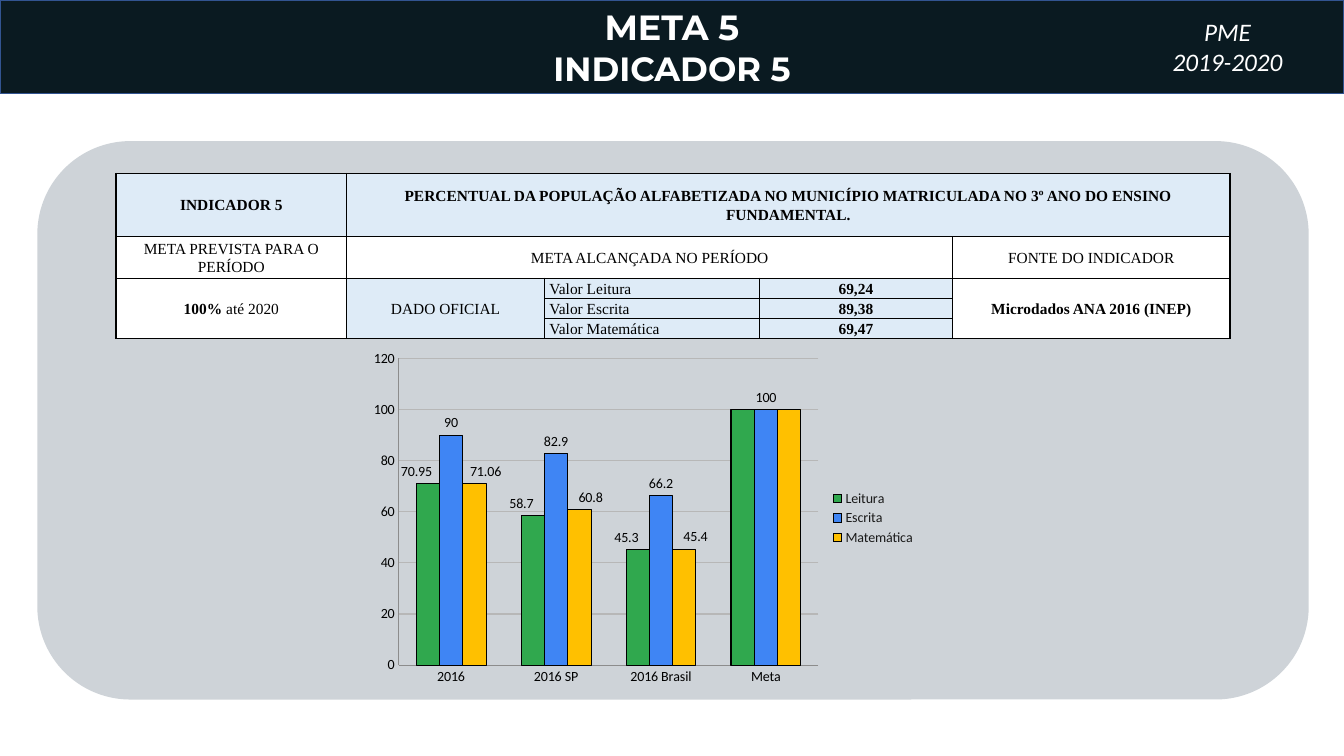
from lxml import etree
from pptx import Presentation
from pptx.chart.data import CategoryChartData
from pptx.dml.color import RGBColor
from pptx.enum import chart as ch, shapes, text
from pptx.oxml import parse_xml
from pptx.oxml.ns import nsdecls, qn
from pptx.util import Inches, Pt

# Content
HEADING = [("META 5", 25), ("INDICADOR 5", 24)]
PLAN = ["PME", "2019-2020"]
PALE, WHITE, BLACK = "DEEBF7", "FFFFFF", "000000"
COLUMNS = [2.29, 1.96, 2.13, 1.92, 2.75]
ROWS = [0.63, 0.41, 0.2, 0.2, 0.2]
# row, column, rows spanned, columns spanned, fill, bold text, plain text
CELLS = [
    (0, 0, 1, 1, PALE, "INDICADOR 5", ""),
    (0, 1, 1, 4, PALE, "PERCENTUAL DA POPULAÇÃO ALFABETIZADA NO MUNICÍPIO "
     "MATRICULADA NO 3º ANO DO ENSINO FUNDAMENTAL.", ""),
    (1, 0, 1, 1, WHITE, "", "META PREVISTA PARA O PERÍODO"),
    (1, 1, 1, 3, WHITE, "", "META ALCANÇADA NO PERÍODO"),
    (1, 4, 1, 1, WHITE, "", "FONTE DO INDICADOR"),
    (2, 0, 3, 1, WHITE, "100%", " até 2020"),
    (2, 1, 3, 1, PALE, "", "DADO OFICIAL"),
    (2, 4, 3, 1, WHITE, "Microdados ANA 2016 (INEP)", ""),
]
RESULTS = [("Valor Leitura", "69,24"), ("Valor Escrita", "89,38"), ("Valor Matemática", "69,47")]
for offset, (subject, result) in enumerate(RESULTS):
    CELLS += [(2 + offset, 2, 1, 1, PALE, "", subject), (2 + offset, 3, 1, 1, PALE, result, "")]
YEARS = ["2016", "2016 SP", "2016 Brasil", "Meta"]
# name, colour, values, sideways label shift, labelled points
SUBJECTS = [
    ("Leitura", "30A84E", [70.95, 58.7, 45.3, 100], -0.02, 3),
    ("Escrita", "3F85F4", [90, 82.9, 66.2, 100], 0, 4),
    ("Matemática", "FFC000", [71.06, 60.8, 45.4, 100], 0.02, 3),
]


def rgb(value):
    return RGBColor.from_string(value)


def paint(target, color):
    target.fill.solid()
    target.fill.fore_color.rgb = rgb(color)


def style(font, color=BLACK, **values):
    for key, value in values.items():
        setattr(font, key, value)
    font.color.rgb = rgb(color)


def box(*lengths):
    return [Inches(length) for length in lengths]


def place(shape, *lengths):
    shape.left, shape.top, shape.width, shape.height = box(*lengths)


def write_lines(frame, lines, **values):
    for index, (line, size) in enumerate(lines):
        paragraph = frame.paragraphs[0] if index == 0 else frame.add_paragraph()
        paragraph.alignment = text.PP_ALIGN.CENTER
        paragraph.line_spacing = 1.0
        paragraph.space_before = Pt(0)
        run = paragraph.add_run()
        run.text = line
        style(run.font, WHITE, size=Pt(size), **values)


def border(cell):
    for side in ("lnL", "lnR", "lnT", "lnB"):
        cell._tc.get_or_add_tcPr().append(parse_xml(
            f'<a:{side} {nsdecls("a")} w="12700"><a:solidFill><a:srgbClr val="{BLACK}"/>'
            f'</a:solidFill></a:{side}>'))


def manual_layout(x, y=None, w=None, h=None):
    layout = etree.Element(qn("c:layout"))
    manual = etree.SubElement(layout, qn("c:manualLayout"))
    settings = [("x", x), ("y", 0)]
    if w:
        settings = [("layoutTarget", "inner"), ("xMode", "edge"), ("yMode", "edge"),
                    ("x", x), ("y", y), ("w", w), ("h", h)]
    for tag, value in settings:
        etree.SubElement(manual, qn("c:" + tag)).set("val", str(value))
    return layout


prs = Presentation()
prs.slide_width, prs.slide_height = box(13.33, 7.5)
slide = prs.slides.add_slide(prs.slide_layouts[5])

# Heading band
heading = slide.shapes.title
place(heading, 0, 0, 13.33, 0.93)
paint(heading, "0A1A21")
heading.line.color.rgb = rgb("325491")
heading.line.width = Pt(1)
heading.text_frame.vertical_anchor = text.MSO_ANCHOR.MIDDLE
heading.text_frame.auto_size = text.MSO_AUTO_SIZE.NONE
write_lines(heading.text_frame, HEADING, name="Montserrat", bold=True)

# Rounded panel
panel = slide.shapes.add_shape(shapes.MSO_SHAPE.ROUNDED_RECTANGLE, *box(0.37, 1.4, 12.61, 5.54))
panel.shadow.inherit = False
paint(panel, "CED3D8")
panel.line.fill.background()

# Indicator table
table = slide.shapes.add_table(len(ROWS), len(COLUMNS), *box(1.15, 1.72, 11.05, 1.63)).table
table.first_row = table.horz_banding = False
for column, width in zip(table.columns, COLUMNS):
    column.width = Inches(width)
for row, height in zip(table.rows, ROWS):
    row.height = Inches(height)
for cell in table.iter_cells():
    border(cell)
    cell.margin_left = cell.margin_right = Inches(0.05)
    cell.margin_top = cell.margin_bottom = 0
    cell.text_frame.paragraphs[0].font.size = Pt(11)
for row, column, down, across, fill, bold, plain in CELLS:
    cell = table.cell(row, column)
    if down * across > 1:
        cell.merge(table.cell(row + down - 1, column + across - 1))
    paint(cell, fill)
    cell.vertical_anchor = text.MSO_ANCHOR.MIDDLE
    paragraph = cell.text_frame.paragraphs[0]
    is_subject = row >= 2 and column == 2
    paragraph.alignment = text.PP_ALIGN.LEFT if is_subject else text.PP_ALIGN.CENTER
    paragraph.line_spacing = 1.07
    paragraph.space_after = Pt(8)
    for words, weight in ((bold, True), (plain, False)):
        if words:
            run = paragraph.add_run()
            run.text = words
            style(run.font, name="Times New Roman", size=Pt(11), bold=weight)

# Results chart
data = CategoryChartData()
data.categories = YEARS
for name, _, values, _, _ in SUBJECTS:
    data.add_series(name, values)
chart = slide.shapes.add_chart(ch.XL_CHART_TYPE.COLUMN_CLUSTERED,
                               *box(3.59, 3.41, 5.59, 3.46), data).chart
chart.has_title = False
style(chart.font, name="Calibri", size=Pt(10))
chart.has_legend = True
chart.legend.position = ch.XL_LEGEND_POSITION.RIGHT
chart.legend.include_in_layout = False
style(chart.legend.font, "1A1A1A", name="Calibri", size=Pt(10))

values_axis = chart.value_axis
values_axis.minimum_scale, values_axis.maximum_scale, values_axis.major_unit = 0, 120, 20
for axis in (chart.category_axis, values_axis):
    axis.major_tick_mark = axis.minor_tick_mark = ch.XL_TICK_MARK.NONE
    axis.format.line.color.rgb = rgb("8C8C8C")
    style(axis.tick_labels.font, name="Calibri", size=Pt(10))
grid = values_axis.major_gridlines.format.line
grid.color.rgb = rgb("B7B7B7")
grid.width = Pt(0.75)

plot = chart.plots[0]
plot.vary_by_categories = False
plot.gap_width, plot.overlap = 150, 0
for series, (_, color, _, shift, labelled) in zip(plot.series, SUBJECTS):
    paint(series.format, color)
    series.format.line.color.rgb = rgb(BLACK)
    series.format.line.width = Pt(0.75)
    series.data_labels.show_value = False
    for index in range(labelled):
        label = series.points[index].data_label
        style(label.font, name="Calibri", size=Pt(10))
        label.position = ch.XL_LABEL_POSITION.OUTSIDE_END
    if shift:
        for label_id in series._element.findall(".//" + qn("c:dLbl") + "/" + qn("c:idx")):
            label_id.addnext(manual_layout(shift))

plot_area = chart._chartSpace.chart.plotArea
for layout in plot_area.findall(qn("c:layout")):
    plot_area.remove(layout)
plot_area.insert(0, manual_layout(0.065, 0.042, 0.745, 0.88))

# Plan and period
plan = slide.shapes.add_textbox(*box(10.87, 0.11, 2.61, 0.71))
plan.text_frame.word_wrap = True
write_lines(plan.text_frame, [(line, 18) for line in PLAN], name="Calibri", italic=True)

prs.save("out.pptx")
